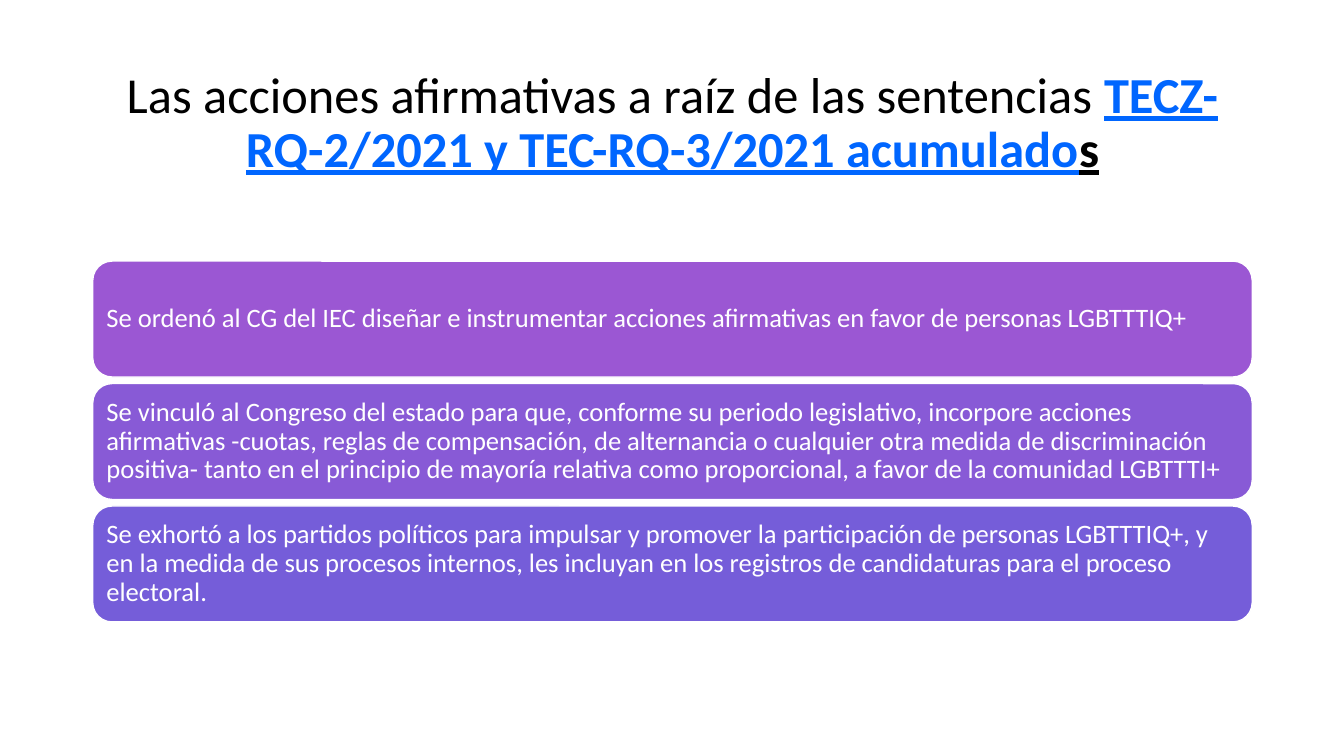
"""Build a slide on affirmative actions with a title and three stacked cards."""
from pptx import Presentation
from pptx.dml.color import RGBColor
from pptx.enum.shapes import MSO_SHAPE
from pptx.enum.text import MSO_ANCHOR, PP_ALIGN
from pptx.util import Inches, Pt

BLACK = RGBColor(0x00, 0x00, 0x00)
WHITE = RGBColor(0xFF, 0xFF, 0xFF)
BLUE = RGBColor(0x00, 0x66, 0xFF)
ORCHID = RGBColor(0x9B, 0x57, 0xD3)
PURPLE = RGBColor(0x88, 0x5A, 0xD6)
VIOLET = RGBColor(0x75, 0x5D, 0xD9)

LEFT, WIDTH = 0.92, 11.5
CARD_TOP, CARD_HEIGHT, CARD_PITCH = 2.59, 1.15, 1.215

TITLE_RUNS = [
    ("Las acciones afirmativas a raíz de las sentencias ", BLACK, False),
    ("TECZ-RQ-2/2021 y TEC-RQ-3/2021 acumulado", BLUE, True),
    ("s", BLACK, True),
]
CARDS = [
    (ORCHID, "Se ordenó al CG del IEC diseñar e instrumentar acciones afirmativas "
             "en favor de personas LGBTTTIQ+"),
    (PURPLE, "Se vinculó al Congreso del estado para que, conforme su periodo "
             "legislativo, incorpore acciones afirmativas -cuotas, reglas de "
             "compensación, de alternancia o cualquier otra medida de discriminación "
             "positiva- tanto en el principio de mayoría relativa como proporcional, "
             "a favor de la comunidad LGBTTTI+"),
    (VIOLET, "Se exhortó a los partidos políticos para impulsar y promover la "
             "participación de personas LGBTTTIQ+, y en la medida de sus procesos "
             "internos, les incluyan en los registros de candidaturas para el "
             "proceso electoral."),
]


class SlideBuilder:
    def __init__(self, prs, font="Calibri"):
        self.font = font
        self.s = prs.slides.add_slide(prs.slide_layouts[5])

    def style(self, r, size, color, strong=False):
        r.font.name = self.font
        r.font.size = Pt(size)
        r.font.color.rgb = color
        r.font.bold = r.font.underline = strong

    def title(self, runs):
        sp = self.s.shapes.title
        sp.left, sp.top = Inches(LEFT), Inches(0.61)
        sp.width, sp.height = Inches(WIDTH), Inches(1.24)
        tf = sp.text_frame
        tf.word_wrap = True
        tf.vertical_anchor = MSO_ANCHOR.MIDDLE
        p = tf.paragraphs[0]
        p.alignment = PP_ALIGN.CENTER
        p.line_spacing = 0.9
        for text, color, strong in runs:
            r = p.add_run()
            r.text = text
            self.style(r, 36, color, strong)

    def card(self, top, color, text):
        sp = self.s.shapes.add_shape(
            MSO_SHAPE.ROUNDED_RECTANGLE,
            Inches(LEFT), Inches(top), Inches(WIDTH), Inches(CARD_HEIGHT))
        sp.shadow.inherit = False
        sp.fill.solid()
        sp.fill.fore_color.rgb = color
        sp.line.color.rgb = WHITE
        sp.line.width = Pt(1)
        tf = sp.text_frame
        tf.text = text
        tf.word_wrap = True
        tf.vertical_anchor = MSO_ANCHOR.MIDDLE
        tf.margin_left = tf.margin_right = Inches(0.08)
        tf.margin_top = tf.margin_bottom = Inches(0.08)
        p = tf.paragraphs[0]
        p.alignment = PP_ALIGN.LEFT
        p.line_spacing = 0.9
        self.style(p.runs[0], 19, WHITE)


def main():
    prs = Presentation()
    prs.slide_width, prs.slide_height = Inches(13.33), Inches(7.5)
    slide = SlideBuilder(prs)
    slide.title(TITLE_RUNS)
    for i, (color, text) in enumerate(CARDS):
        slide.card(CARD_TOP + i * CARD_PITCH, color, text)
    prs.save("out.pptx")


if __name__ == "__main__":
    main()
